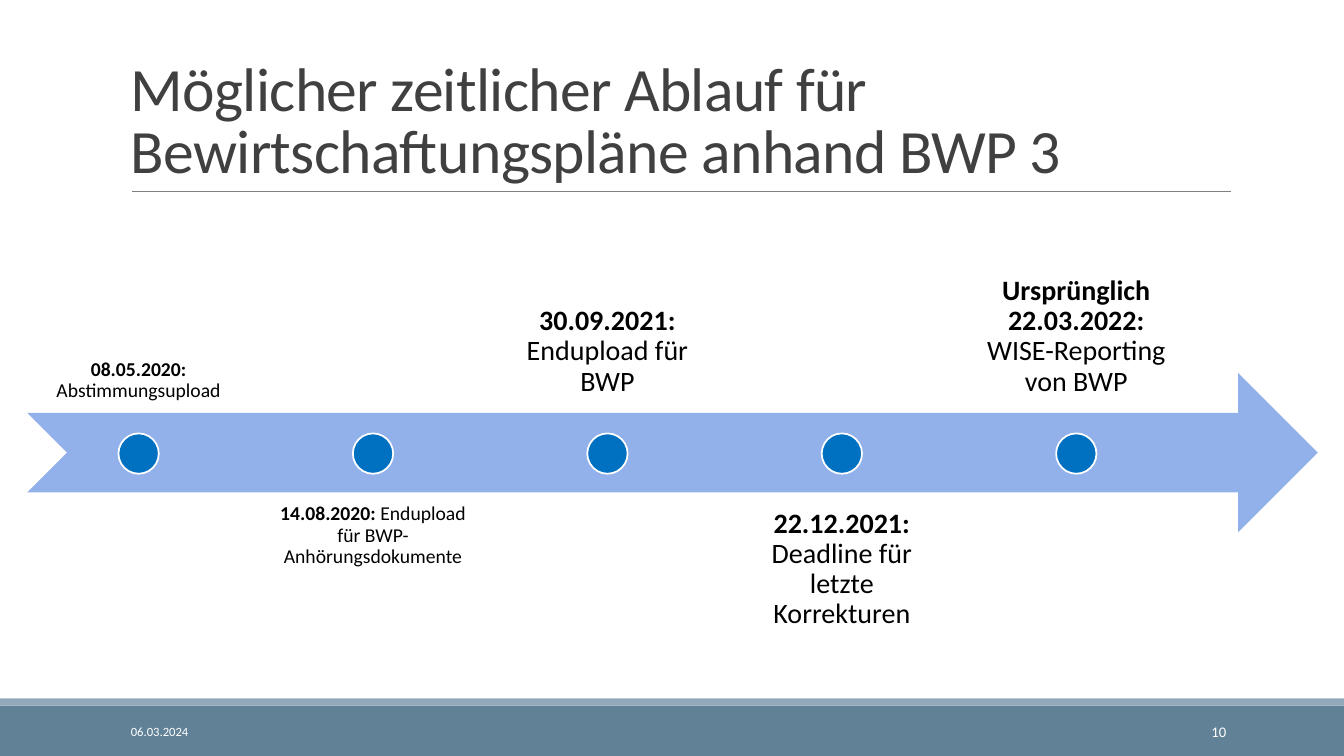
"""Build a timeline slide with five milestones along a notched arrow."""
from dataclasses import dataclass

from pptx import Presentation
from pptx.dml.color import RGBColor
from pptx.enum.shapes import MSO_CONNECTOR, MSO_SHAPE
from pptx.enum.text import MSO_ANCHOR, PP_ALIGN
from pptx.oxml.ns import qn
from pptx.shapes.autoshape import Shape
from pptx.slide import Slide
from pptx.util import Inches, Pt

FONT = "Calibri"
COLORS = {
    "title": "404040",
    "text": "000000",
    "white": "FFFFFF",
    "rule": "808080",
    "footer": "618197",
    "footer_edge": "92A9B9",
    "arrow": "92B1EA",
    "dot": "0070C0",
}
FIRST_LEFT = 0.27
PITCH = 2.325
LABEL_WIDTH = 2.21
LABEL_HEIGHT = 1.58
DOT_SIZE = 0.4
DOT_TOP = 4.3
ABOVE_TOP = 2.52
BELOW_TOP = 4.89


@dataclass(frozen=True)
class Milestone:
    date: str
    event: str
    size: float
    inset: float


MILESTONES = [
    Milestone("08.05.2020:", "Abstimmungsupload", 14, 0.11),
    Milestone("14.08.2020:", "Endupload für BWP-Anhörungsdokumente", 14, 0.11),
    Milestone("30.09.2021:", "Endupload für BWP", 20, 0.16),
    Milestone("22.12.2021:", "Deadline für letzte Korrekturen", 20, 0.16),
    Milestone("Ursprünglich 22.03.2022:", "WISE-Reporting von BWP", 20, 0.16),
]


def color(name: str) -> RGBColor:
    return RGBColor.from_string(COLORS[name])


def add_block(page: Slide, kind: MSO_SHAPE, left: float, top: float, width: float,
              height: float, fill: str, outline: str | None = None) -> Shape:
    block = page.shapes.add_shape(kind, Inches(left), Inches(top), Inches(width), Inches(height))
    block.shadow.inherit = False
    block.fill.solid()
    block.fill.fore_color.rgb = color(fill)
    if outline:
        block.line.color.rgb = color(outline)
        block.line.width = Pt(1.25)
    else:
        block.line.fill.background()
    return block


def add_text(page: Slide, text: str, *, left: float, top: float, width: float, height: float,
             size: float, fill: str = "text", lead: str = "",
             align: PP_ALIGN = PP_ALIGN.LEFT, anchor: MSO_ANCHOR = MSO_ANCHOR.MIDDLE,
             line_spacing: float = 1.0, inset: float | None = None,
             tracking: float = 0) -> Shape:
    box = page.shapes.add_textbox(Inches(left), Inches(top), Inches(width), Inches(height))
    frame = box.text_frame
    frame.word_wrap = True
    frame.vertical_anchor = anchor
    if inset is not None:
        frame.margin_left = frame.margin_right = Inches(inset)
        frame.margin_top = frame.margin_bottom = Inches(inset)
    para = frame.paragraphs[0]
    para.alignment = align
    para.line_spacing = line_spacing
    spans = [(f"{lead} ", True)] if lead else []
    for words, bold in [*spans, (text, False)]:
        span = para.add_run()
        span.text = words
        span.font.name = FONT
        span.font.size = Pt(size)
        span.font.bold = bold
        span.font.color.rgb = color(fill)
        if tracking:
            span.font._element.set("spc", str(round(tracking * 100)))
    return box


def add_rule(page: Slide, left: float, right: float, top: float) -> None:
    rule = page.shapes.add_connector(
        MSO_CONNECTOR.STRAIGHT, Inches(left), Inches(top), Inches(right), Inches(top))
    rule.line.color.rgb = color("rule")
    rule.line.width = Pt(0.5)
    properties = rule._element.spPr
    properties.append(properties.makeelement(qn("a:effectLst"), {}))


def add_milestone(page: Slide, index: int, milestone: Milestone) -> None:
    left = FIRST_LEFT + index * PITCH
    above = index % 2 == 0
    add_text(page, milestone.event, lead=milestone.date, left=left,
             top=ABOVE_TOP if above else BELOW_TOP, width=LABEL_WIDTH, height=LABEL_HEIGHT,
             size=milestone.size, align=PP_ALIGN.CENTER, line_spacing=0.9,
             anchor=MSO_ANCHOR.BOTTOM if above else MSO_ANCHOR.TOP, inset=milestone.inset)
    add_block(page, MSO_SHAPE.OVAL, left + (LABEL_WIDTH - DOT_SIZE) / 2, DOT_TOP,
              DOT_SIZE, DOT_SIZE, "dot", "white")


def main() -> None:
    deck = Presentation()
    deck.slide_width = Inches(13.33)
    deck.slide_height = Inches(7.5)
    page = deck.slides.add_slide(deck.slide_layouts[6])

    add_block(page, MSO_SHAPE.RECTANGLE, 0, 7, 13.33, 0.5, "footer")
    add_block(page, MSO_SHAPE.RECTANGLE, 0, 6.93, 13.33, 0.07, "footer_edge")
    add_rule(page, 1.31, 12.21, 1.9)
    add_text(page, "Möglicher zeitlicher Ablauf für Bewirtschaftungspläne anhand BWP 3",
             left=1.2, top=0.31, width=11, height=1.59, size=44, fill="title",
             anchor=MSO_ANCHOR.BOTTOM, line_spacing=0.85, tracking=-0.5)

    add_block(page, MSO_SHAPE.NOTCHED_RIGHT_ARROW, FIRST_LEFT, 3.7, 12.8, 1.58, "arrow")
    for index, milestone in enumerate(MILESTONES):
        add_milestone(page, index, milestone)

    add_text(page, "06.03.2024", left=1.2, top=7.06, width=2.7, height=0.4,
             size=9, fill="white")
    add_text(page, "10", left=10.83, top=7.06, width=1.43, height=0.4,
             size=10.5, fill="white", align=PP_ALIGN.RIGHT)
    deck.save("out.pptx")


if __name__ == "__main__":
    main()
